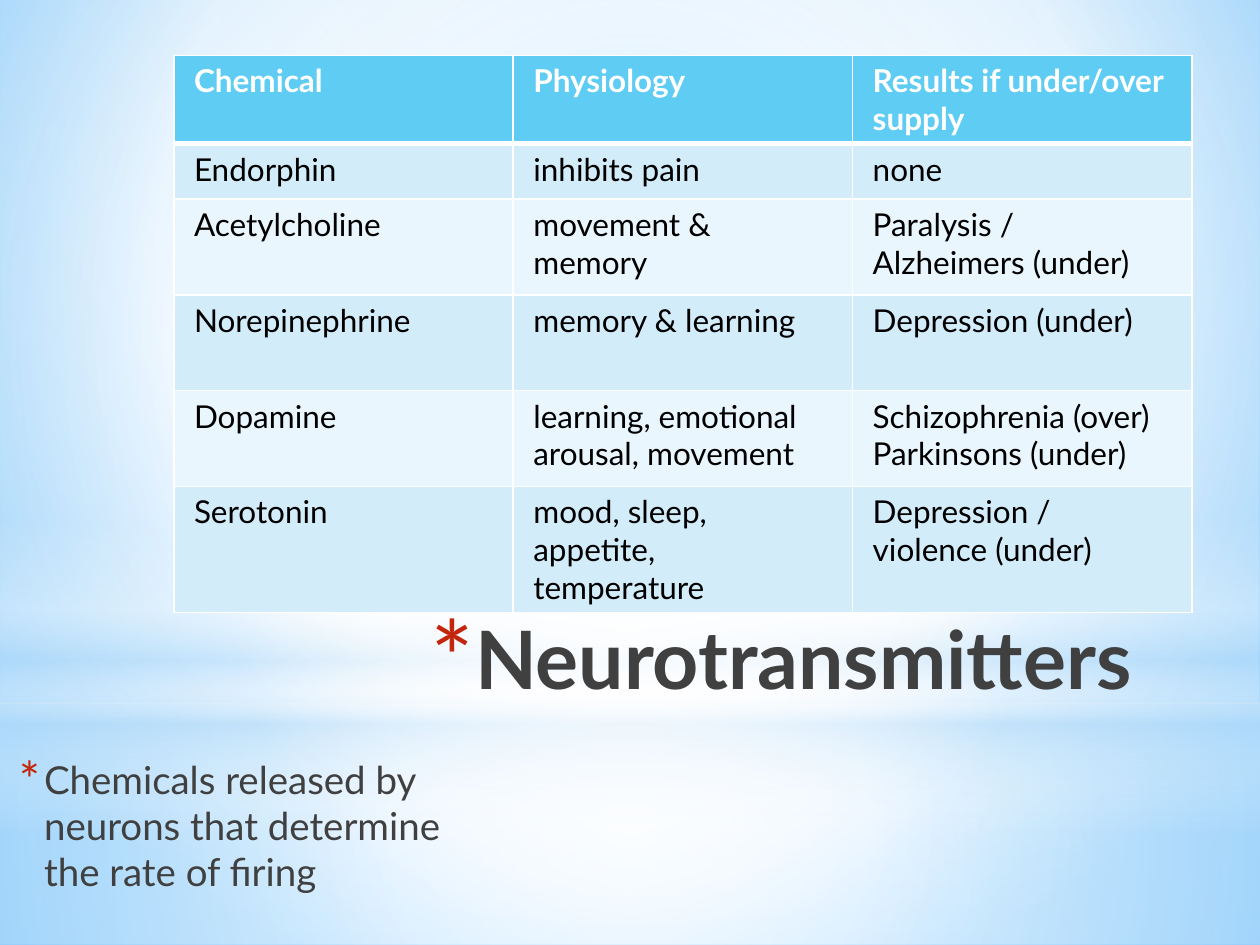
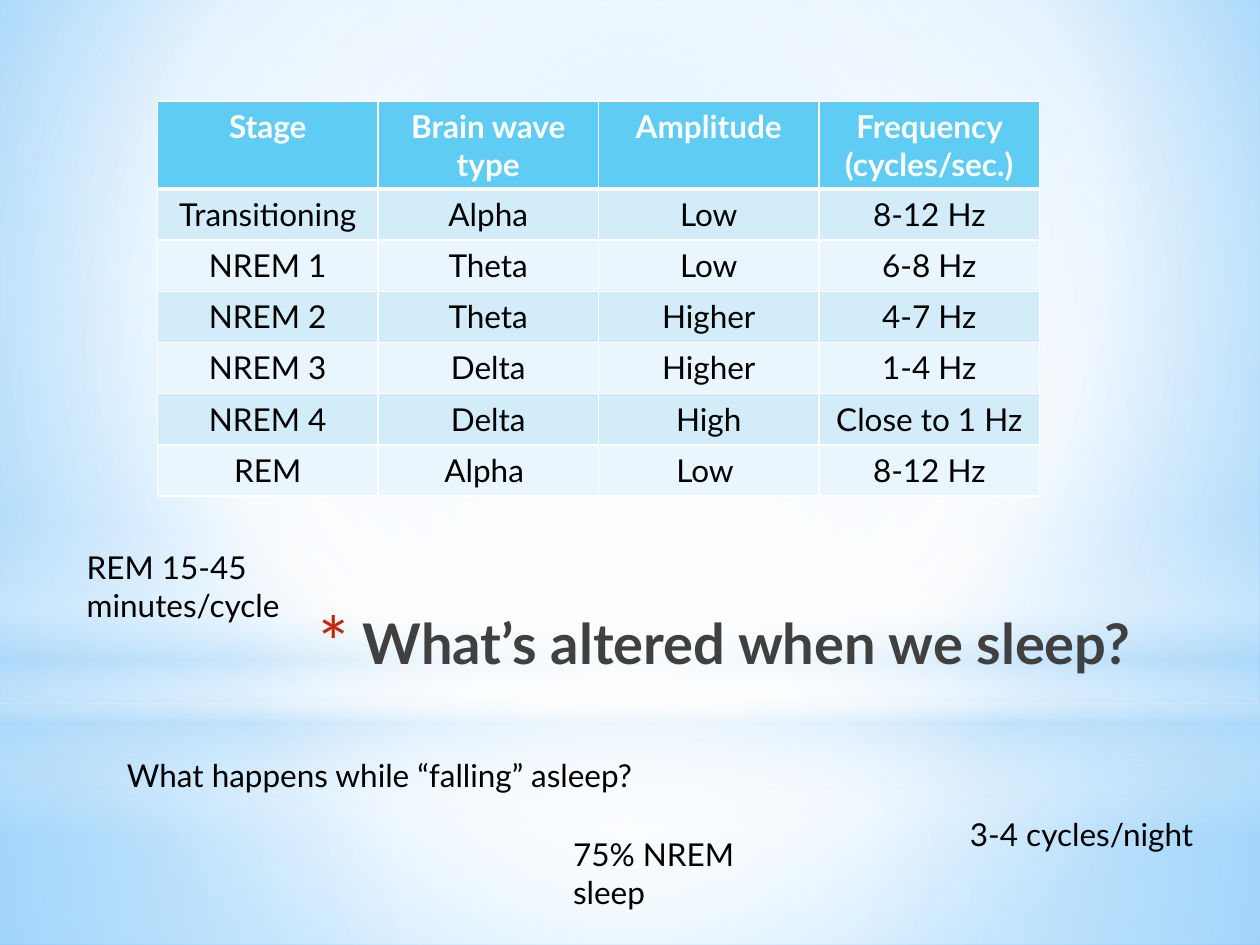
from pptx import Presentation
from pptx.dml.color import RGBColor
from pptx.enum.shapes import MSO_SHAPE as Preset
from pptx.enum.text import MSO_ANCHOR as Anchor, MSO_AUTO_SIZE as AutoSize, PP_ALIGN as Align
from pptx.oxml import parse_xml
from pptx.oxml.ns import nsdecls, qn
from pptx.util import Inches, Pt

WHITE = RGBColor(0xFF, 0xFF, 0xFF)
BLACK = RGBColor(0, 0, 0)
CHARCOAL = RGBColor(0x40, 0x40, 0x40)
RED = RGBColor(0xC3, 0x26, 0x0C)
SKY = RGBColor(0x9E, 0xD5, 0xFF)
AZURE = RGBColor(0x5B, 0xB9, 0xFF)
MIST = RGBColor(0xB4, 0xDC, 0xFA)
HEADER = RGBColor(0x5E, 0xCC, 0xF3)
BANDS = (RGBColor(0xEA, 0xF6, 0xFD), RGBColor(0xD2, 0xEC, 0xFA))

FONT = "Lato"
COLUMNS, ROWS = 100, 75
TITLE_LAYOUT, CONTENT_LAYOUT = 5, 1
CENTRE = (50, 50, 50, 50)

BACKGROUND = [(0, SKY, 100), (60, WHITE, 100), (100, AZURE, 100)]
BACKDROP = [
    (Preset.RECTANGLE, (0, 55.8, 100, 19.2),
     [(0, WHITE, 91), (37, WHITE, 76), (100, MIST, 79)], CENTRE),
    (Preset.RECTANGLE, (0, 0, 100, 55.8),
     [(0, WHITE, 89), (48, WHITE, 62), (100, MIST, 79)], CENTRE),
    (Preset.RECTANGLE, (0, 41.2, 100, 25),
     [(0, WHITE, 0), (29, WHITE, 30), (45, MIST, 40), (55, WHITE, 26),
      (65, MIST, 60), (100, WHITE, 0)], None),
    (Preset.OVAL, (0, 17.5, 100, 55.8),
     [(0, WHITE, 100), (56, WHITE, 0)], CENTRE),
]

NEUROTRANSMITTERS = [
    ("Chemical", "Physiology", "Results if under/over supply"),
    ("Endorphin", "inhibits pain", "none"),
    ("Acetylcholine", "movement & memory", "Paralysis / Alzheimers (under)"),
    ("Norepinephrine", "memory & learning", "Depression (under)"),
    ("Dopamine", "learning, emotional arousal, movement",
     "Schizophrenia (over)\nParkinsons (under)"),
    ("Serotonin", "mood, sleep, appetite, temperature",
     "Depression / violence (under)"),
]
SLEEP_STAGES = [
    ("Stage", "Brain wave type", "Amplitude", "Frequency (cycles/sec.)"),
    ("Transitioning", "Alpha", "Low", "8-12 Hz"),
    ("NREM 1", "Theta", "Low", "6-8 Hz"),
    ("NREM 2", "Theta", "Higher", "4-7 Hz"),
    ("NREM 3", "Delta", "Higher", "1-4 Hz"),
    ("NREM 4", "Delta", "High", "Close to 1 Hz"),
    ("REM", "Alpha ", "Low ", "8-12 Hz"),
]
SLEEP_NOTES = [
    ("75% NREM sleep", (44.5, 65.8, 19, 7)),
    ("What happens while “falling” asleep?", (9.1, 59.5, 44.3, 4)),
    ("REM 15-45 minutes/cycle", (5.9, 43, 24, 7)),
    ("3-4 cycles/night", (76, 64.2, 21, 4)),
]


def set_all(target, values):
    for name, value in values.items():
        setattr(target, name, value)


def replace_gradient(owner, stops, focus):
    stop_xml = "".join(
        f'<a:gs pos="{position * 1000}"><a:srgbClr val="{color}">'
        f'<a:alpha val="{opacity * 1000}"/></a:srgbClr></a:gs>'
        for position, color, opacity in stops)
    if focus:
        edges = " ".join(f'{side}="{share * 1000}"' for side, share in zip("ltrb", focus))
        direction = f'<a:path path="circle"><a:fillToRect {edges}/></a:path>'
    else:
        direction = '<a:lin ang="5400000" scaled="0"/>'
    gradient = parse_xml(
        f'<a:gradFill {nsdecls("a")} rotWithShape="1"><a:gsLst>{stop_xml}</a:gsLst>'
        f'{direction}</a:gradFill>')
    present = next(owner.iter(qn("a:gradFill")))
    present.getparent().replace(present, gradient)


class Deck:
    def __init__(self):
        self.presentation = Presentation()
        set_all(self.presentation, {"slide_width": Inches(10), "slide_height": Inches(7.5)})
        self.column = self.presentation.slide_width / COLUMNS
        self.row = self.presentation.slide_height / ROWS
        self.slide = None

    def grid(self, box):
        units = (self.column, self.row) * 2
        return [round(length * unit) for length, unit in zip(box, units)]

    def place(self, shape, box):
        set_all(shape, dict(zip(("left", "top", "width", "height"), self.grid(box))))

    def add_slide(self, layout):
        layouts = self.presentation.slide_layouts
        self.slide = self.presentation.slides.add_slide(layouts[layout])

    def backdrop(self):
        master = self.presentation.slide_master
        master.background.fill.gradient()
        replace_gradient(master.element, BACKGROUND, (20, 10, 20, 60))
        tree = master.shapes._spTree
        for index, (preset, box, stops, focus) in enumerate(BACKDROP):
            shape = self.slide.shapes.add_shape(preset, *self.grid(box))
            shape.shadow.inherit = False
            shape.line.fill.background()
            shape.fill.gradient()
            replace_gradient(shape._element, stops, focus)
            shape._element.nvSpPr.cNvPr.id = 20 + index
            tree.insert(2 + index, shape._element)

    def fill_text(self, frame, text, size, color=BLACK, bold=False, align=Align.LEFT):
        frame.text = text
        for paragraph in frame.paragraphs:
            set_all(paragraph, {"alignment": align, "space_before": Pt(0)})
            set_all(paragraph.font, {"name": FONT, "size": Pt(size), "bold": bold})
            paragraph.font.color.rgb = color

    def bullet(self, paragraph, margin, hanging, percent):
        properties = paragraph._p.get_or_add_pPr()
        properties.set("marL", str(Inches(margin)))
        properties.set("indent", str(-Inches(hanging)))
        for content in (f'buClr {nsdecls("a")}><a:srgbClr val="{RED}"/></a:buClr',
                        f'buSzPct {nsdecls("a")} val="{percent * 1000}"/',
                        f'buFont {nsdecls("a")} typeface="{FONT}"/',
                        f'buChar {nsdecls("a")} char="*"/'):
            properties.insert_element_before(
                parse_xml(f"<a:{content}>"), "a:tabLst", "a:defRPr", "a:extLst")

    def placeholder(self, shape, text, box, margin, hanging, percent, **style):
        self.place(shape, box)
        frame = shape.text_frame
        set_all(frame, {"vertical_anchor": Anchor.TOP, "word_wrap": True,
                        "auto_size": AutoSize.NONE})
        self.fill_text(frame, text, color=CHARCOAL, **style)
        self.bullet(frame.paragraphs[0], margin, hanging, percent)

    def title(self, text, size, height):
        self.placeholder(self.slide.shapes.title, text, (19.6, 47.8, 71.2, height),
                         0.35, 0.35, 128, size=size, bold=True, align=Align.RIGHT)

    def body(self, text, box):
        self.placeholder(self.slide.placeholders[1], text, box, 0.25, 0.2, 130, size=22)

    def note(self, text, box):
        frame = self.slide.shapes.add_textbox(*self.grid(box)).text_frame
        frame.word_wrap = True
        self.fill_text(frame, text, 18)

    def borders(self, cell, row):
        properties = cell._tc.get_or_add_tcPr()
        widths = {"L": 1, "R": 1, "T": 3 if row == 1 else 1, "B": 3 if row == 0 else 1}
        for side, width in widths.items():
            properties.append(parse_xml(
                f'<a:ln{side} {nsdecls("a")} w="{Pt(width)}"><a:solidFill>'
                f'<a:srgbClr val="{WHITE}"/></a:solidFill></a:ln{side}>'))

    def table(self, records, left, top, width, heights, inset, align):
        box = self.grid((left, top, width, sum(heights)))
        table = self.slide.shapes.add_table(len(records), len(records[0]), *box).table
        table.horz_banding = False
        for row, (record, height) in enumerate(zip(records, heights)):
            table.rows[row].height = round(height * self.row)
            for column, text in enumerate(record):
                cell = table.cell(row, column)
                set_all(cell, {"margin_left": Inches(inset), "margin_right": Inches(inset)})
                self.borders(cell, row)
                cell.fill.solid()
                cell.fill.fore_color.rgb = BANDS[row % 2] if row else HEADER
                self.fill_text(cell.text_frame, text, 18, BLACK if row else WHITE,
                               row == 0, align)


def main():
    deck = Deck()
    deck.add_slide(CONTENT_LAYOUT)
    deck.backdrop()
    deck.title("Neurotransmitters", 46, 12.5)
    deck.table(NEUROTRANSMITTERS, 13.8, 4.4, 80.8, [7, 4.4, 7.6, 7.6, 7.6, 10], 0.16, Align.LEFT)
    deck.body("Chemicals released by neurons that determine the rate of firing",
              (0, 59.5, 37, 14))

    deck.add_slide(TITLE_LAYOUT)
    deck.title("What’s altered when we sleep?", 32, 9.4)
    deck.table(SLEEP_STAGES, 12.5, 8, 70, [6.9] + [4.06] * 6, 0.1, Align.CENTER)
    for text, box in SLEEP_NOTES:
        deck.note(text, box)
    deck.presentation.save("out.pptx")


if __name__ == "__main__":
    main()
